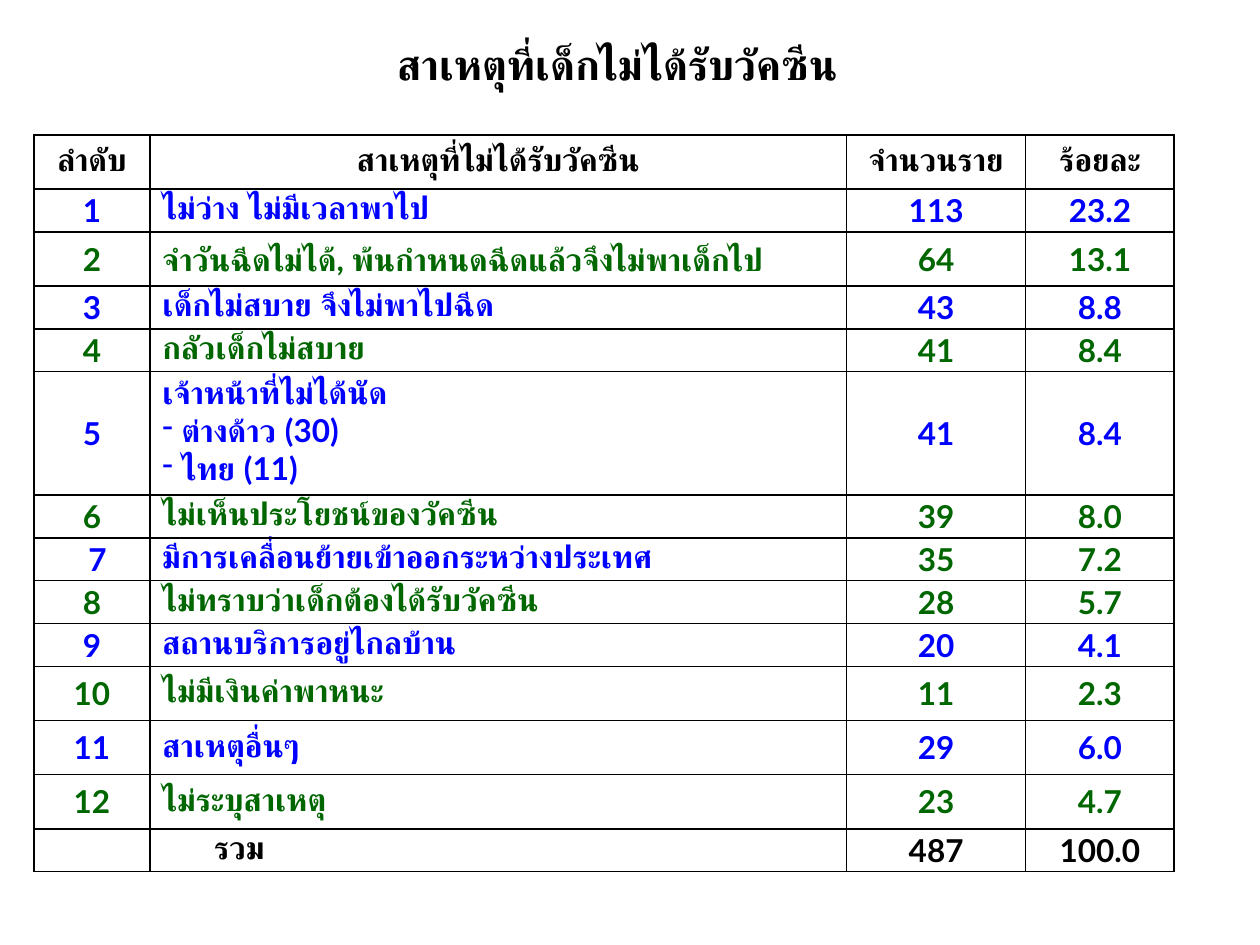
from dataclasses import dataclass

from lxml import etree
from pptx import Presentation
from pptx.dml.color import RGBColor
from pptx.enum.text import MSO_ANCHOR, MSO_AUTO_SIZE, PP_ALIGN
from pptx.oxml.ns import qn
from pptx.util import Inches, Pt

LEFT, CENTER = PP_ALIGN.LEFT, PP_ALIGN.CENTER
MIDDLE = MSO_ANCHOR.MIDDLE
NO_FIT = MSO_AUTO_SIZE.NONE


@dataclass(frozen=True)
class Theme:
    font: str = "Lato"
    black: str = "000000"
    blue: str = "0000FF"
    green: str = "006600"
    white: str = "FFFFFF"
    head: int = 24
    body: int = 18
    line: int = 1


THEME = Theme()
COLS = (0.92, 5.53, 1.42, 1.18)
SHORT, TALL, LIST = 0.34, 0.43, 0.98
HANG = (0.11, -0.02)
TOTAL = (0, 0.5)
INSET = {f"margin_{side}": Inches(0.01)
         for side in ("left", "top", "right", "bottom")}

TITLE = "สาเหตุที่เด็กไม่ได้รับวัคซีน"
HEADS = ("ลำดับ", "สาเหตุที่ไม่ได้รับวัคซีน", "จำนวนราย", "ร้อยละ")
CAUSES = (
    ("ไม่ว่าง ไม่มีเวลาพาไป", "113", "23.2", SHORT),
    ("จำวันฉีดไม่ได้, พ้นกำหนดฉีดแล้วจึงไม่พาเด็กไป", "64", "13.1", TALL),
    ("เด็กไม่สบาย จึงไม่พาไปฉีด", "43", "8.8", SHORT),
    ("กลัวเด็กไม่สบาย", "41", "8.4", SHORT),
    ("เจ้าหน้าที่ไม่ได้นัด\n- ต่างด้าว (30)\n- ไทย (11)", "41", "8.4", LIST),
    ("ไม่เห็นประโยชน์ของวัคซีน", "39", "8.0", SHORT),
    ("มีการเคลื่อนย้ายเข้าออกระหว่างประเทศ", "35", "7.2", SHORT),
    ("ไม่ทราบว่าเด็กต้องได้รับวัคซีน", "28", "5.7", SHORT),
    ("สถานบริการอยู่ไกลบ้าน", "20", "4.1", SHORT),
    ("ไม่มีเงินค่าพาหนะ", "11", "2.3", TALL),
    ("สาเหตุอื่นๆ", "29", "6.0", TALL),
    ("ไม่ระบุสาเหตุ", "23", "4.7", TALL),
)
SUMS = ("", "รวม", "487", "100.0")


def apply(item, values):
    for name, value in values.items():
        setattr(item, name, value)


def write(para, text, size, color, align):
    para.alignment = align
    run = para.add_run()
    run.text = text
    apply(run.font, {"name": THEME.font, "size": Pt(size), "bold": True})
    run.font.color.rgb = RGBColor.from_string(color)


def indent(para, sizes):
    props = para._p.get_or_add_pPr()
    for name, size in zip(("marL", "indent"), sizes):
        props.set(name, str(Inches(size)))


def bullet(para, mark):
    props = para._p.get_or_add_pPr()
    etree.SubElement(props, qn("a:buChar")).set("char", mark)


def border(cell):
    props = cell._tc.get_or_add_tcPr()
    for side in ("lnL", "lnR", "lnT", "lnB"):
        line = etree.SubElement(props, qn(f"a:{side}"))
        line.set("w", str(Pt(THEME.line)))
        fill = etree.SubElement(line, qn("a:solidFill"))
        etree.SubElement(fill, qn("a:srgbClr")).set("val", THEME.black)


def fill_cell(cell, text, color, align=CENTER, sizes=None):
    border(cell)
    cell.fill.solid()
    cell.fill.fore_color.rgb = RGBColor.from_string(THEME.white)
    apply(cell, {"vertical_anchor": MIDDLE, **INSET})
    frame = cell.text_frame
    for i, part in enumerate(text.split("\n") if text else ()):
        para = frame.add_paragraph() if i else frame.paragraphs[0]
        if sizes:
            indent(para, sizes)
        if part.startswith("-"):
            bullet(para, "-")
            part = part[1:]
        write(para, part, THEME.body, color, align)


def add_title(slide, box):
    title = slide.shapes.title
    apply(title, dict(zip(("left", "top", "width", "height"), box)))
    frame = title.text_frame
    apply(frame, {"vertical_anchor": MIDDLE, "word_wrap": True,
                  "auto_size": NO_FIT})
    write(frame.paragraphs[0], TITLE, THEME.head, THEME.black, CENTER)


def add_causes(slide, box):
    highs = [TALL, *(cause[-1] for cause in CAUSES), SHORT]
    grid = slide.shapes.add_table(len(highs), len(COLS), *box).table
    apply(grid, {"first_row": False, "horz_banding": False})
    for col, width in zip(grid.columns, COLS):
        col.width = Inches(width)
    for row, high in zip(grid.rows, highs):
        row.height = Inches(high)
    for c, text in enumerate(HEADS):
        fill_cell(grid.cell(0, c), text, THEME.black)
    for r, (cause, count, share, _) in enumerate(CAUSES, 1):
        color = THEME.blue if r % 2 else THEME.green
        tint = THEME.green if r == 7 else color
        fill_cell(grid.cell(r, 0), str(r), color,
                  sizes=HANG if r == 7 else None)
        fill_cell(grid.cell(r, 1), cause, color, LEFT, HANG)
        fill_cell(grid.cell(r, 2), count, tint)
        fill_cell(grid.cell(r, 3), share, tint)
    for c, text in enumerate(SUMS):
        style = (LEFT, TOTAL) if c == 1 else (CENTER, None)
        fill_cell(grid.cell(len(highs) - 1, c), text, THEME.black, *style)


def main():
    deck = Presentation()
    apply(deck, {"slide_width": Inches(10), "slide_height": Inches(7.5)})
    slide = deck.slides.add_slide(deck.slide_layouts[5])
    add_causes(slide, [Inches(n) for n in (0.27, 1.07, 9.05, 5.91)])
    add_title(slide, [Inches(n) for n in (-0.16, 0.25, 10.12, 0.51)])
    deck.save("out.pptx")


if __name__ == "__main__":
    main()
